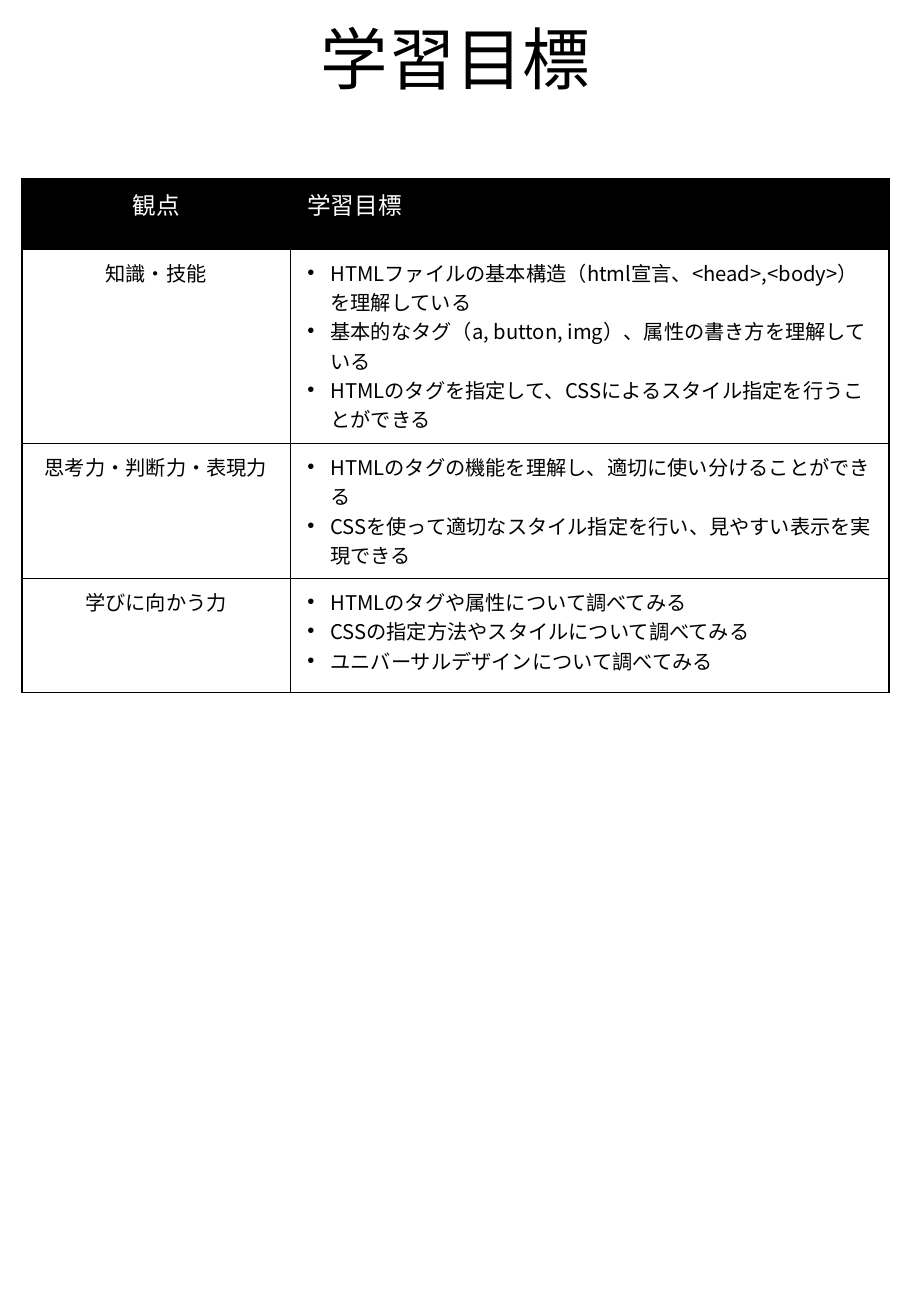
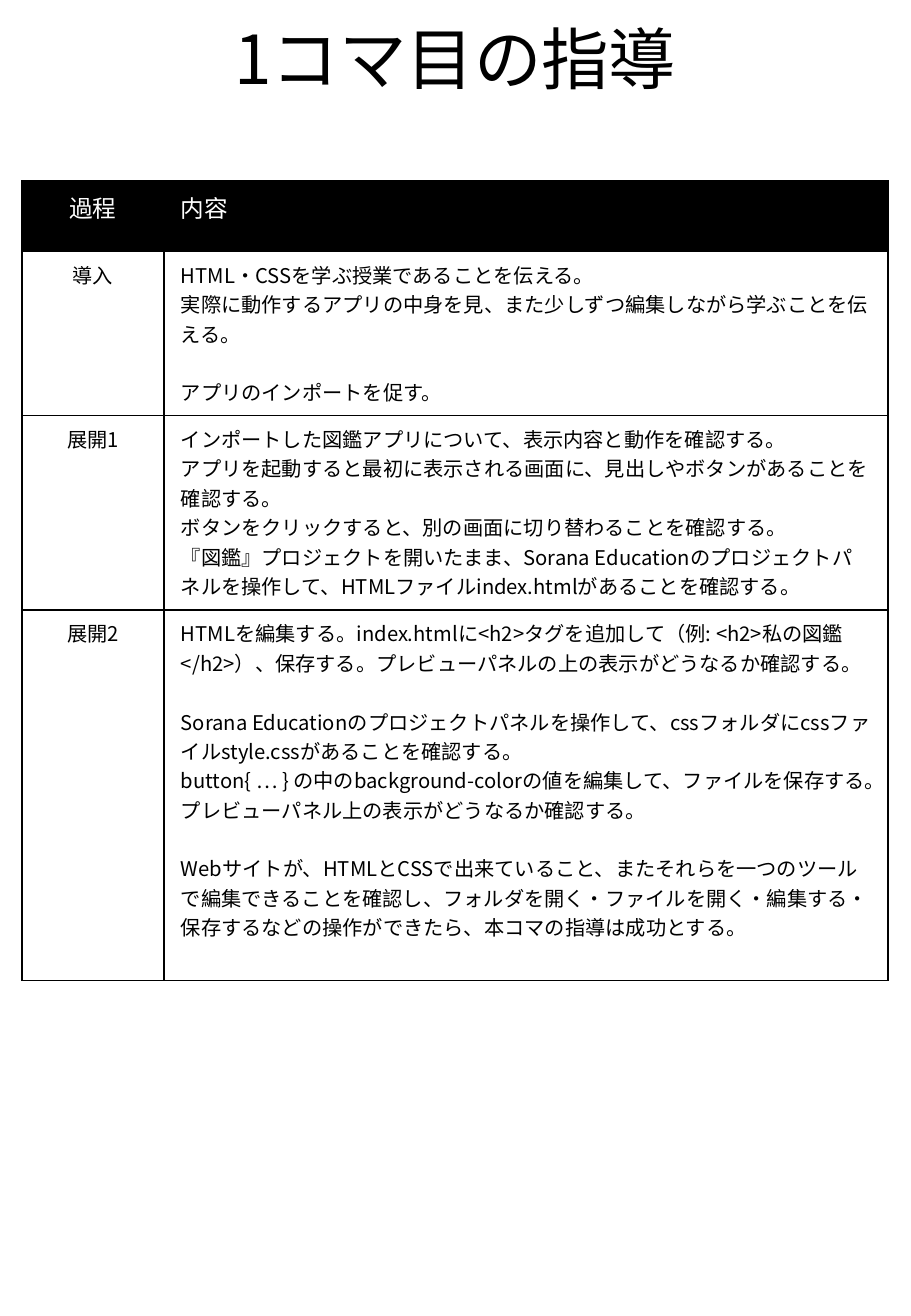
import pptx
import pptx.dml.color
import pptx.enum.text
import pptx.oxml
import pptx.oxml.ns
import pptx.util
from pptx.util import Inches

COLORS = {"ink": "000000", "paper": "FFFFFF"}
FONT = "Noto Sans CJK JP"
TITLE_SIZE, HEAD_SIZE, BODY_SIZE = 40, 14, 12
LINE_GAP = 17.4  # height of one body line, in points
TABLE_LEFT = 0.18
CELL_INSETS = (0.14, 0.07)
BULLET_INDENT = 0.19
CENTER = pptx.enum.text.PP_ALIGN.CENTER
LEFT = pptx.enum.text.PP_ALIGN.LEFT

# Each row is (height, label, groups); a blank line separates the groups.
SLIDES = [
    {
        "title": "学習目標",
        "top": 1.47,
        "columns": (2.21, 4.93),
        "bullets": True,
        "rows": [
            (0.58, "観点", [["学習目標"]]),
            (1.6, "知識・技能", [[
                "HTMLファイルの基本構造（html宣言、<head>,<body>）を理解している",
                "基本的なタグ（a, button, img）、属性の書き方を理解している",
                "HTMLのタグを指定して、CSSによるスタイル指定を行うことができる",
            ]]),
            (1.11, "思考力・判断力・表現力", [[
                "HTMLのタグの機能を理解し、適切に使い分けることができる",
                "CSSを使って適切なスタイル指定を行い、見やすい表示を実現できる",
            ]]),
            (0.94, "学びに向かう力", [[
                "HTMLのタグや属性について調べてみる",
                "CSSの指定方法やスタイルについて調べてみる",
                "ユニバーサルデザインについて調べてみる",
            ]]),
        ],
    },
    {
        "title": "1コマ目の指導",
        "top": 1.49,
        "columns": (1.17, 5.96),
        "bullets": False,
        "rows": [
            (0.58, "過程", [["内容"]]),
            (1.35, "導入", [
                [
                    "HTML・CSSを学ぶ授業であることを伝える。",
                    "実際に動作するアプリの中身を見、また少しずつ編集しながら学ぶことを伝える。",
                ],
                ["アプリのインポートを促す。"],
            ]),
            (1.6, "展開1", [[
                "インポートした図鑑アプリについて、表示内容と動作を確認する。",
                "アプリを起動すると最初に表示される画面に、見出しやボタンがあることを確認する。",
                "ボタンをクリックすると、別の画面に切り替わることを確認する。",
                "『図鑑』プロジェクトを開いたまま、Sorana Educationのプロジェクトパネルを操作して、"
                "HTMLファイルindex.htmlがあることを確認する。",
            ]]),
            (3.05, "展開2", [
                [
                    "HTMLを編集する。index.htmlに<h2>タグを追加して（例: <h2>私の図鑑</h2>）、"
                    "保存する。プレビューパネルの上の表示がどうなるか確認する。",
                ],
                [
                    "Sorana Educationのプロジェクトパネルを操作して、"
                    "cssフォルダにcssファイルstyle.cssがあることを確認する。",
                    "button{ … } の中のbackground-colorの値を編集して、ファイルを保存する。"
                    "プレビューパネル上の表示がどうなるか確認する。",
                ],
                [
                    "Webサイトが、HTMLとCSSで出来ていること、またそれらを一つのツールで"
                    "編集できることを確認し、フォルダを開く・ファイルを開く・編集する・"
                    "保存するなどの操作ができたら、本コマの指導は成功とする。",
                ],
            ]),
        ],
    },
]


def rgb(name):
    return pptx.dml.color.RGBColor.from_string(COLORS[name])


def xml(text):
    return pptx.oxml.parse_xml(text.replace(" ", f" {pptx.oxml.ns.nsdecls('a')} ", 1))


def add_run(p, text, size, color):
    r = p.add_run()
    r.text = text
    r.font.size = pptx.util.Pt(size)
    r.font.color.rgb = rgb(color)
    r.font.name = FONT
    r.font._element.append(xml(f'<a:ea typeface="{FONT}"/>'))


def add_bullet(p):
    pPr = p._p.get_or_add_pPr()
    pPr.set("marL", str(Inches(BULLET_INDENT)))
    pPr.set("indent", str(-Inches(BULLET_INDENT)))
    pPr.append(xml('<a:buFont typeface="Arial"/>'))
    pPr.append(xml('<a:buChar char="•"/>'))


def format_cell(cell, fill):
    cell.margin_left = cell.margin_right = Inches(CELL_INSETS[0])
    cell.margin_top = cell.margin_bottom = Inches(CELL_INSETS[1])
    cell.fill.solid()
    cell.fill.fore_color.rgb = rgb(fill)
    tcPr = cell._tc.get_or_add_tcPr()
    for i, side in enumerate("LRTB"):
        tcPr.insert(i, xml(
            f'<a:ln{side} w="{pptx.util.Pt(1)}"><a:solidFill>'
            f'<a:srgbClr val="{COLORS["ink"]}"/></a:solidFill></a:ln{side}>'))


def fill_cell(cell, groups, size, color, align, bullets):
    tf = cell.text_frame
    p = None
    for g, group in enumerate(groups):
        for i, text in enumerate(group):
            p = tf.add_paragraph() if p else tf.paragraphs[0]
            p.alignment = align
            if g and i == 0:
                p.space_before = pptx.util.Pt(LINE_GAP)
            if bullets:
                add_bullet(p)
            add_run(p, text, size, color)


def set_title(s, text):
    sp = s.shapes.title
    sp.left, sp.top, sp.width, sp.height = map(Inches, (0.56, 0.06, 6.38, 0.81))
    tf = sp.text_frame
    tf.auto_size = pptx.enum.text.MSO_AUTO_SIZE.NONE
    tf.vertical_anchor = pptx.enum.text.MSO_ANCHOR.BOTTOM
    p = tf.paragraphs[0]
    p.alignment = CENTER
    p.line_spacing = 0.9
    add_run(p, text, TITLE_SIZE, "ink")


def add_plan_table(s, plan):
    rows, columns = plan["rows"], plan["columns"]
    table = s.shapes.add_table(
        len(rows), len(columns), Inches(TABLE_LEFT), Inches(plan["top"]),
        Inches(sum(columns)), Inches(sum(row[0] for row in rows))).table
    table.first_row = table.horz_banding = False
    for column, width in zip(table.columns, columns):
        column.width = Inches(width)
    for i, (height, label, groups) in enumerate(rows):
        table.rows[i].height = Inches(height)
        head = i == 0
        size = HEAD_SIZE if head else BODY_SIZE
        color, fill = ("paper", "ink") if head else ("ink", "paper")
        bullets = plan["bullets"] and not head
        for j, (content, align, bulleted) in enumerate(
                [([[label]], CENTER, False), (groups, LEFT, bullets)]):
            cell = table.cell(i, j)
            format_cell(cell, fill)
            fill_cell(cell, content, size, color, align, bulleted)


def main():
    prs = pptx.Presentation()
    prs.slide_width, prs.slide_height = Inches(7.5), Inches(10.83)
    for plan in SLIDES:
        s = prs.slides.add_slide(prs.slide_layouts.get_by_name("Title Only"))
        set_title(s, plan["title"])
        add_plan_table(s, plan)
    prs.save("out.pptx")


if __name__ == "__main__":
    main()
